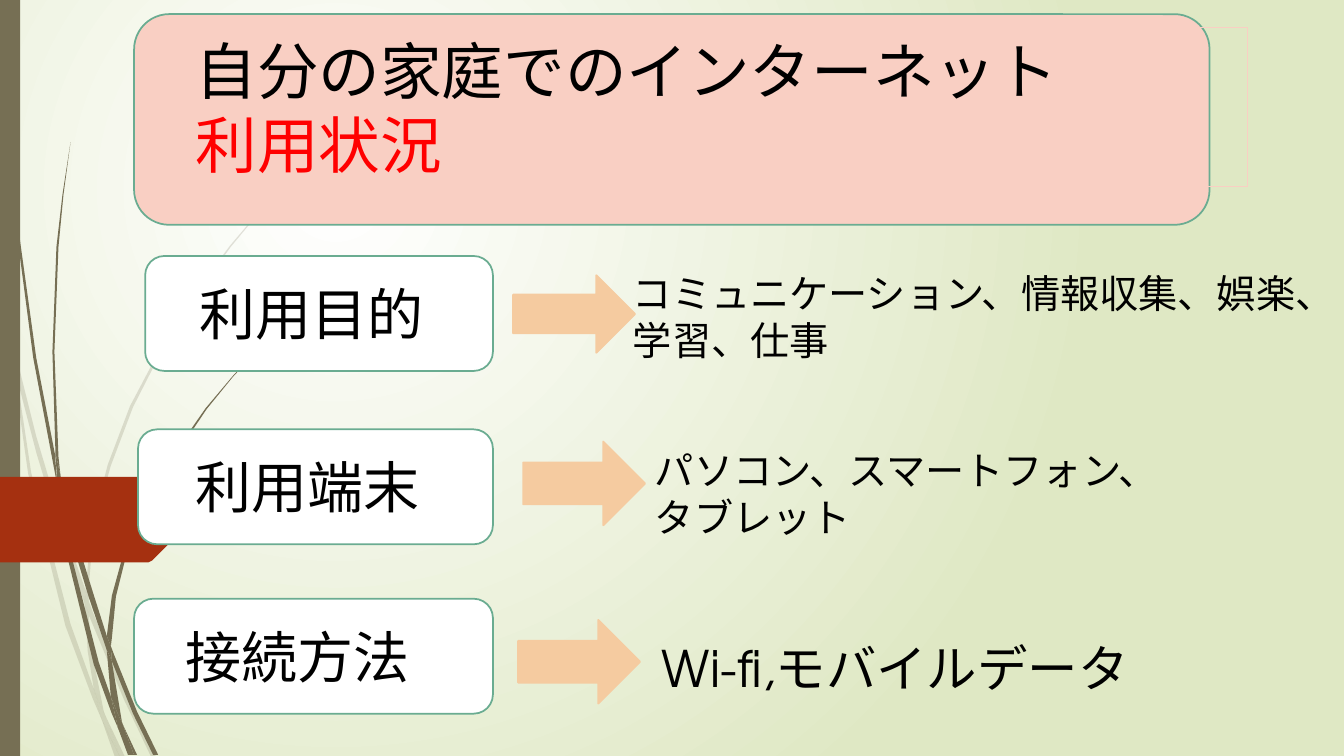
from dataclasses import dataclass
from lxml.etree import SubElement
from pptx import Presentation
from pptx.dml.color import RGBColor
from pptx.enum.shapes import MSO_SHAPE
from pptx.enum.text import MSO_ANCHOR, PP_ALIGN
from pptx.oxml.ns import qn
from pptx.util import Pt


@dataclass(frozen=True)
class Theme:
    font: str = "TeX Gyre Adventor"
    text: str = "000000"
    alert: str = "FF0000"
    white: str = "FFFFFF"
    green: str = "DFE8C4"
    edge: str = "6AAC91"
    pink: str = "F9CFC3"
    sand: str = "F5CBA0"
    stem: str = "766F54"
    rust: str = "A53010"
    title: int = 44
    label: int = 40
    large: int = 36
    note: int = 28


# Outlines of the stems, in hundredths of an inch
PALE = [
    [(11, 350), (9, 322), (0, 282), (0, 299), (10, 344)],
    [(58, 522), (84, 599), (85, 586), (62, 520), (36, 433), (14, 345),
     (17, 376), (36, 449)],
    [(92, 607), (88, 596), (88, 610), (123, 694), (150, 751), (155, 751),
     (127, 692)],
    [(119, 751), (124, 751), (105, 711)],
    [(93, 683), (70, 619), (31, 469), (17, 376), (11, 350), (28, 470),
     (65, 621), (92, 693), (101, 714), (99, 707)],
    [(84, 599), (87, 646), (93, 683), (96, 692), (105, 711), (103, 706),
     (91, 646), (88, 610), (88, 608)],
    [(88, 584), (93, 522), (110, 462), (132, 404), (160, 349), (192, 296),
     (229, 245), (268, 198), (290, 175), (312, 154), (312, 153), (289, 175),
     (268, 197), (228, 244), (190, 295), (158, 348), (129, 403), (107, 461),
     (91, 522), (85, 584), (85, 586), (88, 596)],
    [(101, 714), (114, 751), (119, 751)],
    [(88, 608), (88, 596), (85, 586), (84, 599)],
    [(96, 692), (93, 683), (99, 707), (101, 714), (119, 751), (105, 711)],
]
DARK = [
    [(7, 110), (17, 233), (33, 355), (56, 477), (57, 481), (55, 457),
     (55, 453), (36, 355), (19, 232), (8, 109), (5, 48), (4, 0), (3, 0),
     (4, 48)],
    [(88, 592), (106, 645), (106, 631), (93, 590), (75, 532), (60, 472),
     (64, 505), (75, 549)],
    [(113, 649), (110, 641), (111, 656), (132, 708), (152, 749), (157, 749),
     (136, 706)],
    [(110, 691), (98, 657), (72, 556), (64, 505), (57, 477), (68, 557),
     (93, 659), (111, 708), (117, 722), (116, 717)],
    [(60, 472), (58, 453), (54, 349), (58, 245), (63, 193), (70, 141),
     (62, 193), (56, 245), (52, 349), (55, 449)],
    [(133, 749), (136, 749), (122, 719)],
    [(57, 477), (64, 505), (60, 472), (55, 449), (55, 453)],
    [(111, 633), (115, 592), (125, 552), (158, 476), (205, 406), (231, 374),
     (245, 359), (261, 344), (260, 344), (245, 358), (231, 373), (204, 405),
     (156, 474), (122, 551), (111, 591), (106, 631), (110, 641)],
    [(117, 722), (127, 749), (131, 749)],
    [(106, 645), (110, 691), (116, 706), (122, 719), (121, 716), (111, 656),
     (109, 651)],
    [(106, 645), (109, 651), (111, 656), (110, 641), (106, 631)],
    [(116, 706), (110, 691), (116, 717), (117, 722), (130, 749), (133, 749),
     (122, 719)],
]
TAB = [(0, 473), (147, 473), (150, 474), (190, 513), (191, 515), (190, 517),
       (151, 556), (147, 558), (0, 558)]


class Deck:
    def __init__(self, theme):
        self.look = theme
        self.prs = Presentation()
        self.prs.slide_width, self.prs.slide_height = Pt(960), Pt(540)
        self.slide = self.prs.slides.add_slide(self.prs.slide_layouts[5])
        self.shapes = self.slide.shapes

    def ground(self):
        """Fill the background with a round gradient."""
        fill = self.slide.background.fill
        fill.gradient()
        colors = (self.look.white, self.look.green)
        for place, (stop, color) in enumerate(zip(fill.gradient_stops, colors)):
            stop.position = place
            stop.color.rgb = RGBColor.from_string(color)
        grad = self.slide.element.find(".//" + qn("a:gradFill"))
        grad.remove(grad.find(qn("a:lin")))
        ring = SubElement(grad, qn("a:path"), path="circle")
        SubElement(ring, qn("a:fillToRect"),
                   l="50000", t="50000", r="100000", b="100000")

    def paint(self, shape, fill, line=None):
        shape.shadow.inherit = False
        shape.fill.solid()
        shape.fill.fore_color.rgb = RGBColor.from_string(fill)
        if line:
            shape.line.color.rgb = RGBColor.from_string(line)
            shape.line.width = Pt(1.25)
        else:
            shape.line.fill.background()

    def stem(self, points, color, alpha=None):
        """Draw a closed outline; alpha is its opacity in percent."""
        pen = self.shapes.build_freeform(*points[0], scale=Pt(0.72))
        pen.add_line_segments(points[1:], close=True)
        shape = pen.convert_to_shape()
        self.paint(shape, color)
        if alpha:
            tone = shape.element.spPr.find(".//" + qn("a:srgbClr"))
            SubElement(tone, qn("a:alpha"), val=str(alpha * 1000))

    def shape(self, kind, box, fill, line=None):
        self.paint(self.shapes.add_shape(kind, *map(Pt, box)), fill, line)

    def style(self, frame, size, colors):
        """Format each paragraph with its own colour."""
        frame.word_wrap = True
        for para, color in zip(frame.paragraphs, colors):
            para.alignment = PP_ALIGN.LEFT
            for run in para.runs:
                run.font.name = self.look.font
                run.font.size = Pt(size)
                run.font.color.rgb = RGBColor.from_string(color)
                SubElement(run.font._element, qn("a:ea"),
                           typeface=self.look.font)

    def title(self, text, box):
        head = self.shapes.title
        self.shapes.element.append(head.element)
        head.left, head.top, head.width, head.height = map(Pt, box)
        head.line.color.rgb = RGBColor.from_string(self.look.pink)
        head.line.width = Pt(0.75)
        frame = head.text_frame
        frame.text = text
        frame.vertical_anchor = MSO_ANCHOR.MIDDLE
        self.style(frame, self.look.title, (self.look.text, self.look.alert))

    def text(self, words, box, size):
        frame = self.shapes.add_textbox(*map(Pt, box)).text_frame
        frame.text = words
        self.style(frame, size, [self.look.text] * len(frame.paragraphs))

    def save(self):
        self.prs.save("out.pptx")


def main():
    look = Theme()
    deck = Deck(look)
    deck.ground()
    for points in PALE:
        deck.stem(points, look.stem, 20)
    for points in DARK:
        deck.stem(points, look.stem)
    deck.shape(MSO_SHAPE.RECTANGLE, (0, 0, 14.4, 540), look.stem)
    deck.stem(TAB, look.rust)

    deck.shape(MSO_SHAPE.ROUNDED_RECTANGLE, (95.8, 10.1, 768.2, 150.5),
               look.pink, look.edge)
    deck.title("自分の家庭でのインターネット\n利用状況", (132.5, 19.4, 758.9, 113.8))

    # label, box left and top, label left, arrow box, note, note box, note size
    rows = [
        ("利用目的", 103.7, 182.9, 135.4, (366.5, 196.6, 87.1, 55.4),
         "コミュニケーション、情報収集、娯楽、学習、仕事",
         (445, 188.6, 514.8, 74.9), look.note),
        ("利用端末", 98.6, 306.7, 132.5, (373.7, 315.4, 87.1, 59.8),
         "パソコン、スマートフォン、\nタブレット",
         (460.8, 315.4, 492.5, 74.9), look.note),
        ("接続方法", 95.8, 427.7, 125.3, (370.1, 442.8, 87.1, 59.8),
         "Wi-fi,モバイルデータ",
         (465.8, 451.4, 448.6, 51.1), look.large),
    ]
    right = 352.1
    for label, left, top, start, arrow, note, area, size in rows:
        deck.shape(MSO_SHAPE.ROUNDED_RECTANGLE,
                   (left, top, right - left, 82.1), look.white, look.edge)
        deck.text(label, (start, top + 13.3, 200, 55.4), look.label)
        deck.text(note, area, size)
        deck.shape(MSO_SHAPE.RIGHT_ARROW, arrow, look.sand, look.sand)
    deck.save()


if __name__ == "__main__":
    main()
